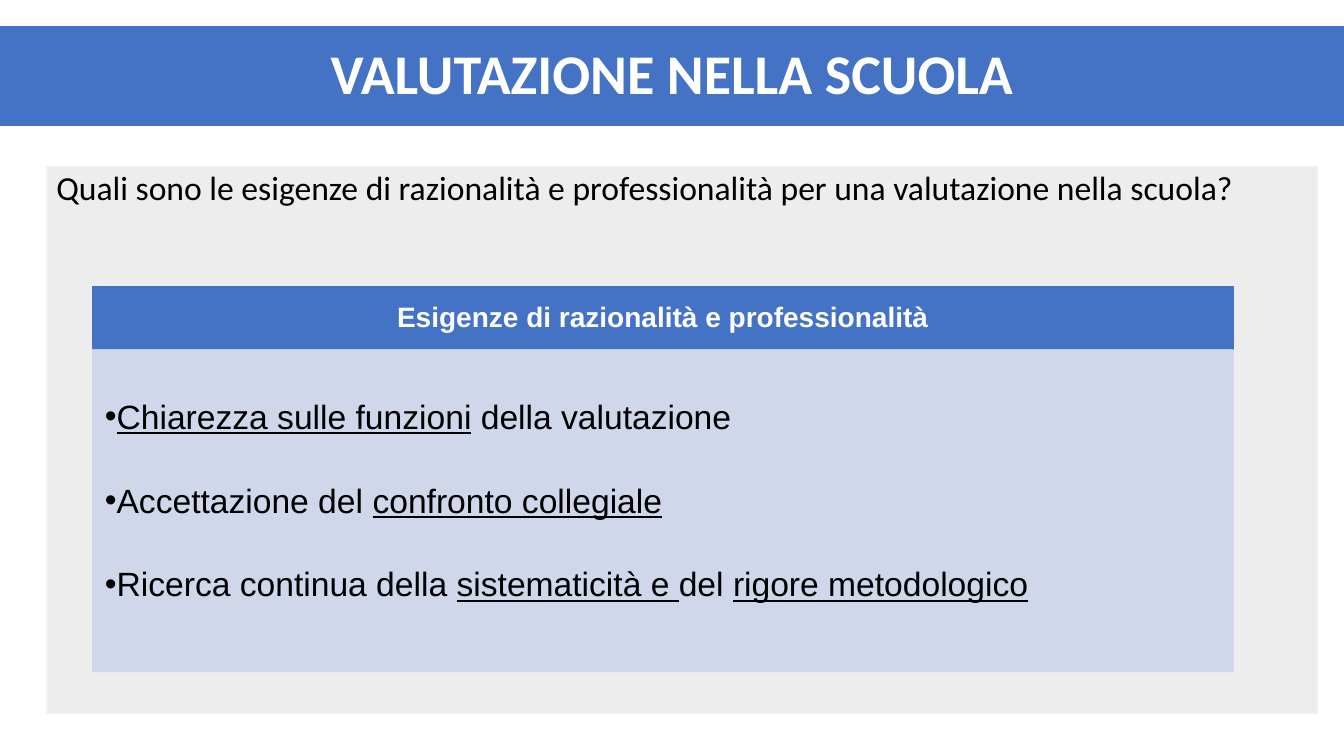
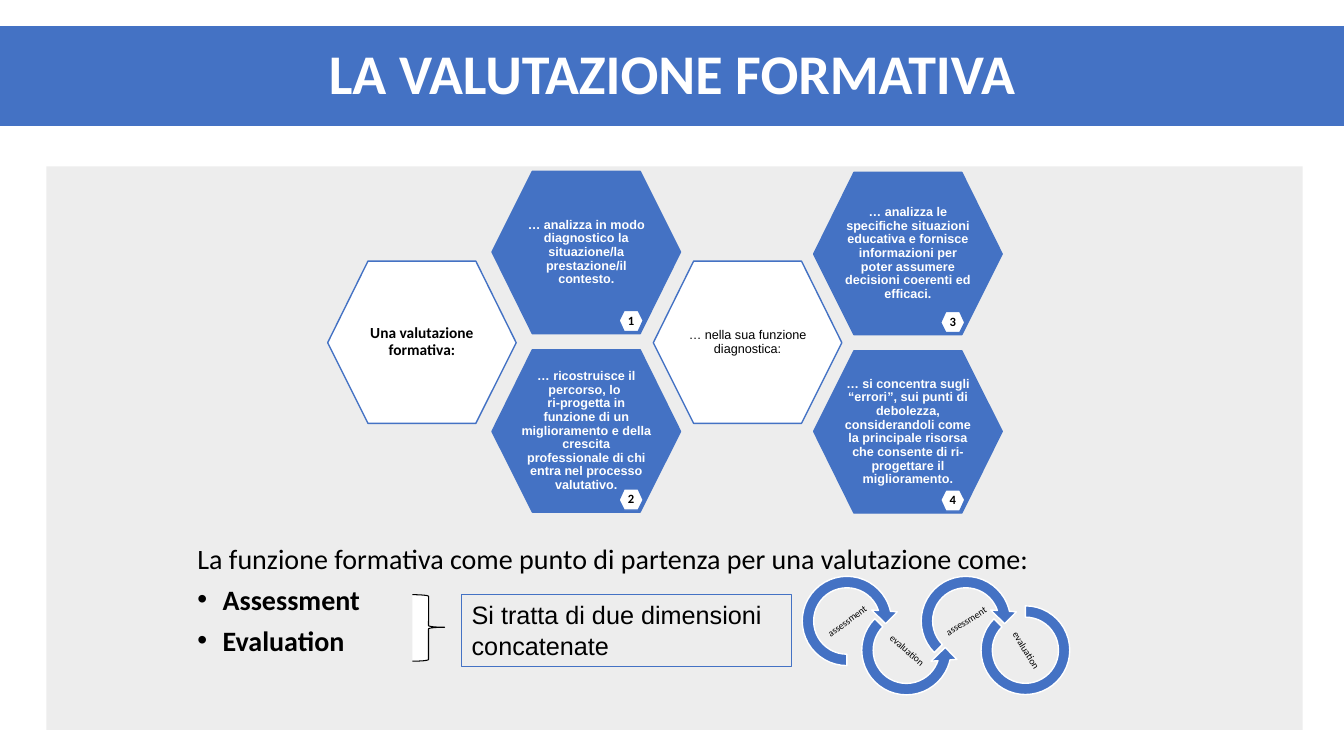
"""Builds two slides about assessment at school."""
from dataclasses import dataclass, field
from typing import Any, NamedTuple, Optional

from lxml.etree import SubElement
from pptx import Presentation
from pptx.dml.color import RGBColor
from pptx.enum.shapes import MSO_SHAPE as Preset
from pptx.enum.text import MSO_ANCHOR as Anchor, PP_ALIGN as Align
from pptx.oxml.ns import qn
from pptx.shapes.autoshape import Shape
from pptx.slide import Slide
from pptx.util import Emu, Pt

SCALE = 9144
BLUE, PALE_BLUE, GREY = "4472C4", "CFD5EA", "EDEDED"
WHITE, BLACK = "FFFFFF", "000000"
HEXAGON_WIDTH, HEXAGON_HEIGHT = 187, 161


class Box(NamedTuple):
    """Holds left, top, width and height in px."""
    left: int
    top: int
    width: int
    height: int


class Span(NamedTuple):
    """Holds a stretch of text."""
    text: str
    underline: bool = False


@dataclass
class Line:
    """Holds one paragraph."""
    spans: list[Span]
    bold: bool = False
    bullet: bool = False
    indent: int = 0


@dataclass
class Look:
    """Holds the format of a text body."""
    size: int
    font: str = "Calibri"
    color: str = BLACK
    bold: bool = False
    anchor: Any = Anchor.MIDDLE
    insets: tuple[int, int, int, int] = (10, 5, 10, 5)
    paragraph: dict[str, Any] = field(
        default_factory=lambda: {"alignment": Align.CENTER, "line_spacing": 0.9})


@dataclass
class Hexagon:
    """Holds one cell of the honeycomb."""
    left: int
    top: int
    text: str
    look: Look
    fill: str = BLUE
    number: str = ""


@dataclass
class Ring:
    """Holds one link of the chain."""
    preset: Any
    center_y: int
    size: int
    adjustments: tuple[float, ...]
    label: str
    label_angle: float


HEXAGON_INSETS = (29, 26, 29, 26)
TITLE = Look(40, color=WHITE, bold=True)
CLAIM = Look(9, "Arial", WHITE, True, insets=HEXAGON_INSETS)
OPENING = Look(11, bold=True, insets=HEXAGON_INSETS)
FUNCTION = Look(9, "Arial", insets=HEXAGON_INSETS)
NUMBER = Look(9, bold=True, insets=(0, 0, 0, 0))
RING_LABEL = Look(7, insets=(1, 1, 1, 1))
QUESTION = Look(24, anchor=Anchor.TOP,
                paragraph={"alignment": Align.LEFT, "line_spacing": 0.9})
HEADING = Look(20, "Arial", WHITE, True)
NEEDS = Look(24, "Arial", anchor=Anchor.TOP, insets=(12, 50, 16, 17),
             paragraph={"alignment": Align.LEFT, "line_spacing": 0.9,
                        "space_after": Pt(34)})
OUTLOOK = Look(20, anchor=Anchor.TOP,
               paragraph={"alignment": Align.LEFT, "line_spacing": 0.8,
                          "space_before": Pt(10)})
REMARK = Look(18, "Arial", anchor=Anchor.TOP, paragraph={"alignment": Align.LEFT})

NEED_LINES = [
    Line([Span("Chiarezza sulle funzioni", True), Span(" della valutazione")], bullet=True),
    Line([Span("Accettazione del "), Span("confronto collegiale", True)], bullet=True),
    Line([Span("Ricerca continua della "), Span("sistematicità e ", True),
          Span("del "), Span("rigore metodologico", True)], bullet=True),
]
OUTLOOK_LINES = [
    Line([Span("La funzione formativa come punto di partenza per una valutazione come:")]),
    Line([Span("Assessment")], bold=True, bullet=True, indent=25),
    Line([Span("Evaluation")], bold=True, bullet=True, indent=25),
]
HEXAGONS = [
    Hexagon(325, 259, "Una valutazione formativa:", OPENING, WHITE),
    Hexagon(488, 170, "… analizza in modo diagnostico la situazione/la prestazione/il contesto.",
            CLAIM, number="1"),
    Hexagon(488, 347, "… ricostruisce il percorso, lo \nri-progetta in funzione di un "
            "miglioramento e della crescita professionale di chi entra nel processo "
            "valutativo.", CLAIM, number="2"),
    Hexagon(648, 259, "… nella sua funzione diagnostica:", FUNCTION, WHITE),
    Hexagon(807, 171, "… analizza le specifiche situazioni educativa e fornisce informazioni "
            "per poter assumere decisioni coerenti ed efficaci.", CLAIM, number="3"),
    Hexagon(807, 348, "… si concentra sugli “errori”, sui punti di debolezza, "
            "considerandoli come la principale risorsa che consente di ri-progettare il "
            "miglioramento.", CLAIM, number="4"),
]
RINGS = [
    Ring(Preset.CIRCULAR_ARROW, 616, 103, (0.11, 11.42, 45, 108, 0.125), "assessment", 323.4),
    Ring(Preset.LEFT_CIRCULAR_ARROW, 645, 103, (0.11, 11.42, 63, 189, 0.125),
         "evaluation", 40.7),
    Ring(Preset.CIRCULAR_ARROW, 616, 103, (0.11, 11.42, 45, 135, 0.125), "assessment", 328.1),
    Ring(Preset.BLOCK_ARC, 645, 88, (0, 189, 0.127), "evaluation", 58.2),
]


def px(length: float) -> Emu:
    """Turns px into EMU."""
    return Emu(round(length * SCALE))


def rgb(color: str) -> RGBColor:
    """Turns a hex string into a colour."""
    return RGBColor.from_string(color)


def apply(target: Any, values: dict[str, Any]) -> None:
    """Sets each format value on the target."""
    for name, value in values.items():
        setattr(target, name, value)


def paint(shape: Shape, fill: Optional[str], line: Optional[str], width: float = 1) -> Shape:
    """Gives a shape its fill and outline, without shadow."""
    shape.shadow.inherit = False
    if fill:
        shape.fill.solid()
        shape.fill.fore_color.rgb = rgb(fill)
    else:
        shape.fill.background()
    if line:
        shape.line.color.rgb = rgb(line)
        shape.line.width = Pt(width)
    else:
        shape.line.fill.background()
    return shape


def write(shape: Shape, lines: list[Line], look: Look) -> Shape:
    """Fills a shape with formatted paragraphs."""
    frame = shape.text_frame
    left, top, right, bottom = map(px, look.insets)
    apply(frame, {"word_wrap": True, "vertical_anchor": look.anchor, "margin_left": left,
                  "margin_top": top, "margin_right": right, "margin_bottom": bottom})
    for index, line in enumerate(lines):
        paragraph = frame.add_paragraph() if index else frame.paragraphs[0]
        apply(paragraph, look.paragraph)
        if line.bullet:
            properties = paragraph._p.get_or_add_pPr()
            properties.set("marL", str(px(line.indent)))
            properties.set("indent", str(-px(line.indent)))
            SubElement(properties, qn("a:buFont"), typeface="Arial")
            SubElement(properties, qn("a:buChar"), char="•")
        for span in line.spans:
            for part_index, part in enumerate(span.text.split("\n")):
                if part_index:
                    paragraph.add_line_break()
                run = paragraph.add_run()
                run.text = part
                apply(run.font, {"name": look.font, "size": Pt(look.size),
                                 "bold": look.bold or line.bold,
                                 "underline": span.underline})
                run.font.color.rgb = rgb(look.color)
    return shape


def plain(text: str) -> list[Line]:
    """Wraps a text as a single paragraph."""
    return [Line([Span(text)])]


def add_preset(slide: Slide, box: Box, fill: Optional[str], line: Optional[str] = None,
               width: float = 1, preset: Any = Preset.RECTANGLE) -> Shape:
    """Draws a preset shape."""
    return paint(slide.shapes.add_shape(preset, *map(px, box)), fill, line, width)


def add_text(slide: Slide, box: Box, lines: list[Line], look: Look) -> Shape:
    """Draws a text box."""
    return write(slide.shapes.add_textbox(*map(px, box)), lines, look)


def add_hexagon(slide: Slide, box: Box, fill: str, text: str, look: Look) -> None:
    """Draws a hexagon with centred text."""
    left, top, width, height = box
    corner = round(height / 4)
    right, bottom, middle = left + width, top + height, top + height / 2
    builder = slide.shapes.build_freeform(left, middle, scale=SCALE)
    builder.add_line_segments([(left + corner, top), (right - corner, top), (right, middle),
                               (right - corner, bottom), (left + corner, bottom)])
    write(paint(builder.convert_to_shape(), fill, BLUE), plain(text), look)


def add_ring(slide: Slide, ring: Ring, center_x: int) -> None:
    """Draws a link of the chain with its tilted label."""
    half = ring.size / 2
    link = add_preset(slide, Box(center_x - half, ring.center_y - half, ring.size, ring.size),
                      BLUE, WHITE, preset=ring.preset)
    link.rotation = 270
    for index, value in enumerate(ring.adjustments):
        link.adjustments[index] = value
    label = add_text(slide, Box(center_x - 28, ring.center_y - 14, 57, 29),
                     plain(ring.label), RING_LABEL)
    label.rotation = ring.label_angle


def add_titled_slide(deck: Any, title: str, panel: Box) -> tuple[Slide, Shape]:
    """Adds a slide with title band and grey panel."""
    slide = deck.slides.add_slide(deck.slide_layouts[6])
    background = add_preset(slide, panel, GREY)
    band = add_preset(slide, Box(0, 26, 1333, 99), BLUE, BLUE, 0.75)
    write(band, plain(title), TITLE)
    return slide, background


def build_school(deck: Any) -> None:
    """Builds the slide on assessment at school."""
    slide, panel = add_titled_slide(deck, "VALUTAZIONE NELLA SCUOLA", Box(46, 165, 1261, 543))
    write(panel, plain("Quali sono le esigenze di razionalità e professionalità per una "
                       "valutazione nella scuola?"), QUESTION)
    heading = add_preset(slide, Box(92, 284, 1131, 63), BLUE, BLUE)
    write(heading, plain("Esigenze di razionalità e professionalità"), HEADING)
    needs = add_preset(slide, Box(92, 347, 1131, 319), PALE_BLUE, PALE_BLUE)
    for color in needs._element.spPr.iter(qn("a:srgbClr")):
        SubElement(color, qn("a:alpha"), val="90000")
    write(needs, NEED_LINES, NEEDS)


def build_formative(deck: Any) -> None:
    """Builds the slide on formative assessment."""
    slide, _ = add_titled_slide(deck, "LA VALUTAZIONE FORMATIVA", Box(46, 165, 1246, 559))
    add_text(slide, Box(186, 539, 969, 127), OUTLOOK_LINES, OUTLOOK)
    for cell in HEXAGONS:
        add_hexagon(slide, Box(cell.left, cell.top, HEXAGON_WIDTH, HEXAGON_HEIGHT),
                    cell.fill, cell.text, cell.look)
        if cell.number:
            add_hexagon(slide, Box(cell.left + 126, cell.top + 138, 24, 21),
                        WHITE, cell.number, NUMBER)
    for index, ring in enumerate(RINGS):
        add_ring(slide, ring, 840 + 59 * index)
    brace = add_preset(slide, Box(409, 590, 32, 66), WHITE, BLACK, 0.75, Preset.RIGHT_BRACE)
    brace.adjustments[0], brace.adjustments[1] = 0.05, 0.49
    remark = add_preset(slide, Box(458, 590, 327, 71), None, BLUE, 0.75)
    write(remark, plain("Si tratta di due dimensioni concatenate"), REMARK)


def main() -> None:
    """Builds and saves the presentation."""
    deck = Presentation()
    deck.slide_width, deck.slide_height = px(1333), px(750)
    build_school(deck)
    build_formative(deck)
    deck.save("out.pptx")


if __name__ == "__main__":
    main()
